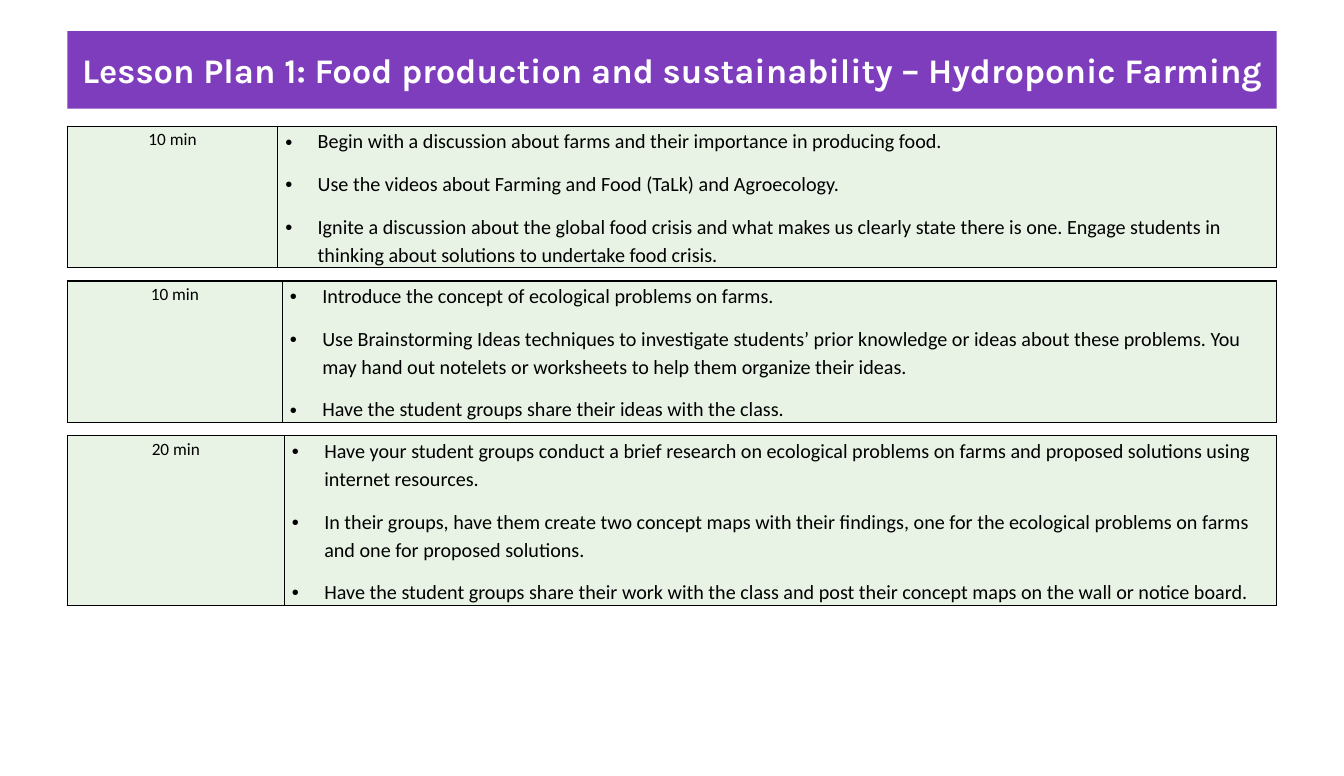
from dataclasses import dataclass

from lxml import etree
from pptx import Presentation
from pptx.dml.color import RGBColor
from pptx.enum.text import MSO_ANCHOR, MSO_AUTO_SIZE, PP_ALIGN
from pptx.oxml.ns import qn
from pptx.util import Pt

LEFT, CENTER = PP_ALIGN.LEFT, PP_ALIGN.CENTER
MIDDLE = MSO_ANCHOR.MIDDLE
NO_AUTOFIT = MSO_AUTO_SIZE.NONE
TITLE_ONLY = 5


@dataclass(frozen=True)
class Theme:
    """Colours, fonts and type sizes of the lesson plan."""
    banner: str = "7E3DBC"
    banner_text: str = "FFFFFF"
    cell: str = "E8F3E5"
    ink: str = "000000"
    title_font: str = "Karla"
    body_font: str = "Calibri"
    title_size: float = 24
    step_size: float = 14
    time_size: float = 12


THEME = Theme()
SLIDE_WIDTH, SLIDE_HEIGHT = 935.3, 540
MARGIN, CONTENT_WIDTH = 46.8, 841.7
BANNER_TOP, BANNER_HEIGHT = 21.6, 54
FIRST_TOP, ACTIVITY_PITCH = 87.8, 107.7
CELL_INSET, BULLET_INDENT = 5.2, 22.5

TITLE = "Lesson Plan 1: Food production and sustainability – Hydroponic Farming"
ACTIVITIES = [
    ("10 min", 146.6, 96.5, [
        "Begin with a discussion about farms and their importance in producing food.",
        "Use the videos about Farming and Food (TaLk) and Agroecology.",
        "Ignite a discussion about the global food crisis and what makes us clearly state "
        "there is one. Engage students in thinking about solutions to undertake food crisis.",
    ]),
    ("10 min", 149.8, 96.5, [
        "Introduce the concept of ecological problems on farms.",
        "Use Brainstorming Ideas techniques to investigate students’ prior knowledge or ideas "
        "about these problems. You may hand out notelets or worksheets to help them organize "
        "their ideas.",
        "Have the student groups share their ideas with the class.",
    ]),
    ("20 min", 151.2, 115.2, [
        "Have your student groups conduct a brief research on ecological problems on farms "
        "and proposed solutions using internet resources.",
        "In their groups, have them create two concept maps with their findings, one for the "
        "ecological problems on farms and one for proposed solutions.",
        "Have the student groups share their work with the class and post their concept maps "
        "on the wall or notice board.",
    ]),
]


def add_bullet(paragraph):
    """Give the paragraph a hanging round bullet."""
    properties = paragraph._p.get_or_add_pPr()
    properties.set("marL", str(Pt(BULLET_INDENT)))
    properties.set("indent", str(-Pt(BULLET_INDENT)))
    colour = etree.SubElement(properties, qn("a:buClr"))
    etree.SubElement(colour, qn("a:srgbClr"), val=THEME.ink)
    etree.SubElement(properties, qn("a:buFont"), typeface="Arial")
    etree.SubElement(properties, qn("a:buChar"), char="•")


def write_text(frame, lines, *, size, font=THEME.body_font, color=THEME.ink, bold=False,
               align=LEFT, bullet=False, line_spacing=1.0, space_after=0):
    """Write one formatted paragraph per line."""
    for index, line in enumerate(lines):
        paragraph = frame.add_paragraph() if index else frame.paragraphs[0]
        if bullet:
            add_bullet(paragraph)
        paragraph.alignment = align
        paragraph.line_spacing = line_spacing
        paragraph.space_before = Pt(0)
        paragraph.space_after = Pt(space_after)
        run = paragraph.add_run()
        run.text = line
        run.font.name = font
        run.font.size = Pt(size)
        run.font.bold = bold
        run.font.color.rgb = RGBColor.from_string(color)


def style_cell(cell):
    """Set the insets, thin borders and fill of a cell."""
    cell.margin_left = cell.margin_right = Pt(CELL_INSET)
    cell.margin_top = cell.margin_bottom = Pt(0)
    properties = cell._tc.get_or_add_tcPr()
    for side in ("lnL", "lnR", "lnT", "lnB"):
        border = etree.SubElement(properties, qn(f"a:{side}"), w=str(Pt(1)))
        paint = etree.SubElement(border, qn("a:solidFill"))
        etree.SubElement(paint, qn("a:srgbClr"), val=THEME.ink)
    cell.fill.solid()
    cell.fill.fore_color.rgb = RGBColor.from_string(THEME.cell)


def place_banner(slide, left, top, width, height):
    """Turn the title placeholder into the coloured banner."""
    banner = slide.shapes.title
    banner.left, banner.top = Pt(left), Pt(top)
    banner.width, banner.height = Pt(width), Pt(height)
    banner.fill.solid()
    banner.fill.fore_color.rgb = RGBColor.from_string(THEME.banner)
    frame = banner.text_frame
    frame.auto_size = NO_AUTOFIT
    frame.word_wrap = True
    frame.vertical_anchor = MIDDLE
    write_text(frame, [TITLE], size=THEME.title_size, font=THEME.title_font,
               color=THEME.banner_text, bold=True, align=CENTER)


def place_activity(slide, left, top, width, height, duration, time_width, steps):
    """Add a one-row table with the duration and steps of an activity."""
    table = slide.shapes.add_table(1, 2, Pt(left), Pt(top), Pt(width), Pt(height)).table
    table.first_row = table.horz_banding = False
    table.columns[0].width = Pt(time_width)
    table.columns[1].width = Pt(width - time_width)
    time_cell, steps_cell = table.rows[0].cells
    style_cell(time_cell)
    style_cell(steps_cell)
    write_text(time_cell.text_frame, [duration], size=THEME.time_size, align=CENTER,
               line_spacing=1.15, space_after=10)
    write_text(steps_cell.text_frame, steps, size=THEME.step_size, bullet=True,
               line_spacing=1.15, space_after=10)


def main():
    """Build and save the lesson plan slide."""
    deck = Presentation()
    deck.slide_width, deck.slide_height = Pt(SLIDE_WIDTH), Pt(SLIDE_HEIGHT)
    slide = deck.slides.add_slide(deck.slide_layouts[TITLE_ONLY])
    place_banner(slide, MARGIN, BANNER_TOP, CONTENT_WIDTH, BANNER_HEIGHT)
    for index, (duration, time_width, height, steps) in enumerate(ACTIVITIES):
        place_activity(slide, MARGIN, FIRST_TOP + index * ACTIVITY_PITCH, CONTENT_WIDTH,
                       height, duration, time_width, steps)
    deck.save("out.pptx")


if __name__ == "__main__":
    main()
